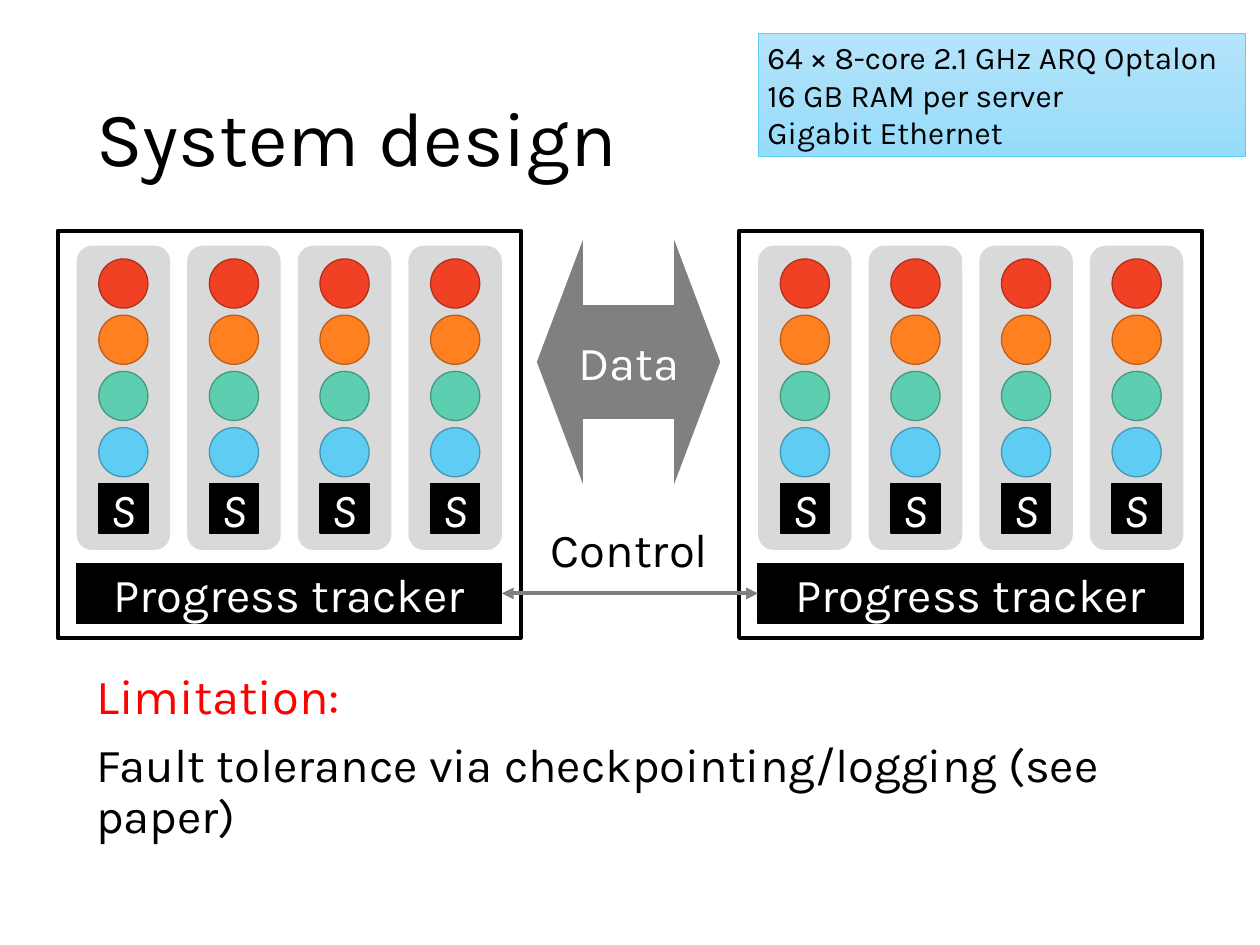
"""Build the system design slide: two servers joined by data and control channels."""
import copy

import pptx
import pptx.dml.color
import pptx.enum.shapes
import pptx.enum.text
import pptx.oxml
import pptx.oxml.ns
import pptx.util

FONT = "Karla"
BLACK, WHITE, GREY = "000000", "FFFFFF", "808080"
TITLE = "System design"
LIMITATION = [("Limitation:", 37.3, "FF0000"),
              ("Fault tolerance via checkpointing/logging (see paper)", 36, BLACK)]
HARDWARE = ["64 × 8-core 2.1 GHz ARQ Optalon", "16 GB RAM per server", "Gigabit Ethernet"]
HARDWARE_SHADES = [(0, "B5E5FB"), (0.5, "A6DFF9"), (1, "95DDFB")]
OPERATORS = [("F14124", "B2301B"), ("FF8021", "BD5F18"),
             ("5DCEAF", "459881"), ("5ECCF3", "4697B4")]

SERVER_LEFTS, SERVER_TOP, SERVER_WIDTH, SERVER_HEIGHT = (0.61, 7.82), 2.44, 4.9, 4.31
PADDING = 0.2
WORKERS, WORKER_WIDTH, WORKER_HEIGHT = 4, 0.99, 3.22
INNER_WIDTH = SERVER_WIDTH - 2 * PADDING
WORKER_PITCH = (INNER_WIDTH - WORKER_WIDTH) / (WORKERS - 1)
NODE, NODE_PITCH = 0.52, 0.595
TRACKER_TOP, TRACKER_HEIGHT = 5.96, 0.64

SHAPE = pptx.enum.shapes.MSO_SHAPE
ALIGN = pptx.enum.text.PP_ALIGN
MIDDLE = pptx.enum.text.MSO_ANCHOR.MIDDLE


def color(code):
    return pptx.dml.color.RGBColor.from_string(code)


def inches(*lengths):
    return [pptx.util.Inches(length) for length in lengths]


def write(box, lines, align=ALIGN.LEFT, italic=False, spacing=None, before=None):
    frame = box.text_frame
    frame.word_wrap = True
    for index, (text, size, ink) in enumerate(lines):
        para = frame.add_paragraph() if index else frame.paragraphs[0]
        para.alignment = align
        if spacing:
            para.line_spacing = spacing
        if before is not None:
            para.space_before = pptx.util.Pt(before)
        span = para.add_run()
        span.text = text
        span.font.name = FONT
        span.font.size = pptx.util.Pt(size)
        span.font.italic = italic
        span.font.color.rgb = color(ink)


def add_box(page, kind, place, fill, line=None, width=1, label=None, italic=False):
    box = page.shapes.add_shape(kind, *inches(*place))
    box.shadow.inherit = False
    box.fill.solid()
    box.fill.fore_color.rgb = color(fill)
    if line:
        box.line.color.rgb = color(line)
        box.line.width = pptx.util.Pt(width)
    else:
        box.line.fill.background()
    if label:
        box.text_frame.vertical_anchor = MIDDLE
        write(box, [(label, 36, WHITE)], ALIGN.CENTER, italic)
    return box


def add_text(page, place, lines, **style):
    box = page.shapes.add_textbox(*inches(*place))
    write(box, lines, **style)


def add_worker(page, left, top):
    add_box(page, SHAPE.ROUNDED_RECTANGLE, (left, top, WORKER_WIDTH, WORKER_HEIGHT), "D9D9D9")
    node_left = left + (WORKER_WIDTH - NODE) / 2
    node_top = top + 0.14
    for row, (fill, line) in enumerate(OPERATORS):
        add_box(page, SHAPE.OVAL, (node_left, node_top + row * NODE_PITCH, NODE, NODE), fill, line)
    scheduler_top = node_top + len(OPERATORS) * NODE_PITCH
    add_box(page, SHAPE.RECTANGLE, (node_left, scheduler_top, NODE, NODE), BLACK, BLACK,
            label="S", italic=True)


def add_server(page, left):
    add_box(page, SHAPE.RECTANGLE, (left, SERVER_TOP, SERVER_WIDTH, SERVER_HEIGHT),
            WHITE, BLACK, 3)
    for column in range(WORKERS):
        add_worker(page, left + PADDING + column * WORKER_PITCH, SERVER_TOP + 0.16)
    add_box(page, SHAPE.RECTANGLE, (left + PADDING, TRACKER_TOP, INNER_WIDTH, TRACKER_HEIGHT),
            BLACK, BLACK, label="Progress tracker")


def add_channels(page):
    start = SERVER_LEFTS[0] + SERVER_WIDTH - PADDING
    end = SERVER_LEFTS[1] + PADDING
    level = TRACKER_TOP + TRACKER_HEIGHT / 2
    control = page.shapes.add_connector(pptx.enum.shapes.MSO_CONNECTOR.CURVE,
                                        *inches(start, level, end, level))
    control.line.color.rgb = color(GREY)
    control.line.width = pptx.util.Pt(3)
    outline = control.line._get_or_add_ln()
    for tag in ("a:headEnd", "a:tailEnd"):
        arrowhead = pptx.oxml.ns.qn(tag)
        outline.append(outline.makeelement(arrowhead, {"type": "triangle"}))
    properties = control._element.spPr
    properties.append(properties.makeelement(pptx.oxml.ns.qn("a:effectLst"), {}))

    data = add_box(page, SHAPE.LEFT_RIGHT_ARROW, (5.68, 2.54, 1.94, 2.58), GREY, label="Data")
    data.adjustments[0] = 0.467
    data.adjustments[1] = 0.251
    add_text(page, (5.6, 5.46, 2.12, 0.71), [("Control", 36, BLACK)], align=ALIGN.CENTER)


def add_hardware(page):
    box = add_box(page, SHAPE.RECTANGLE, (8.02, 0.35, 5.15, 1.31), WHITE, "5ECCF3", 0.5)
    box.fill.gradient()
    box.fill.gradient_angle = 270
    first = box._element.spPr.find(".//" + pptx.oxml.ns.qn("a:gs"))
    first.addnext(copy.deepcopy(first))
    for stop, (position, shade) in zip(box.fill.gradient_stops, HARDWARE_SHADES):
        stop.position = position
        stop.color.rgb = color(shade)
    box.text_frame.vertical_anchor = pptx.enum.text.MSO_ANCHOR.TOP
    write(box, [(text, 24, BLACK) for text in HARDWARE])


def main():
    deck = pptx.Presentation()
    deck.slide_width, deck.slide_height = inches(13.33, 10)
    page = deck.slides.add_slide(deck.slide_layouts[5])
    title = page.shapes.title
    title.left, title.top, title.width, title.height = inches(0.92, 0.53, 11.5, 1.93)
    title.text_frame.vertical_anchor = MIDDLE
    title.text_frame.auto_size = pptx.enum.text.MSO_AUTO_SIZE.NONE
    write(title, [(TITLE, 58.7, BLACK)], spacing=0.9)
    add_text(page, (0.92, 7.06, 11.5, 2.57), LIMITATION, spacing=0.9, before=13.3)
    for left in SERVER_LEFTS:
        add_server(page, left)
    add_channels(page)
    add_hardware(page)
    deck.save("out.pptx")


if __name__ == "__main__":
    main()
